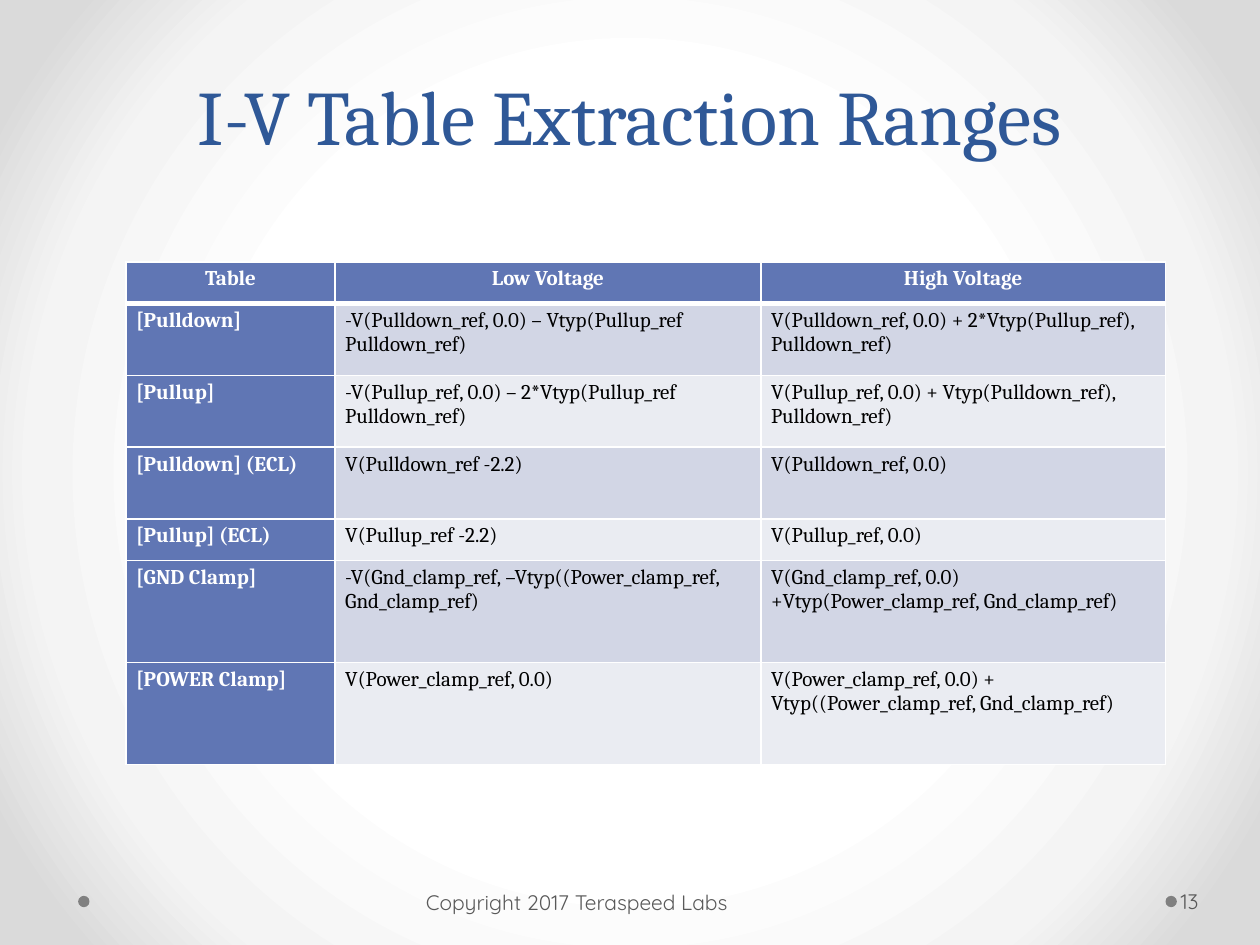
from typing import NamedTuple

import pptx
import pptx.dml.color
import pptx.enum.shapes
import pptx.enum.text
import pptx.oxml
import pptx.oxml.ns
import pptx.slide
import pptx.table
import pptx.text.text
import pptx.util

RGBColor = pptx.dml.color.RGBColor
Align = pptx.enum.text.PP_ALIGN

WIDTH = pptx.util.Inches(10)
HEIGHT = pptx.util.Inches(7.5)

WHITE = RGBColor(0xFF, 0xFF, 0xFF)
BLACK = RGBColor(0x00, 0x00, 0x00)
TITLE_BLUE = RGBColor(0x2F, 0x58, 0x97)
HEADER_BLUE = RGBColor(0x60, 0x76, 0xB4)
BAND_DARK = RGBColor(0xD2, 0xD6, 0xE5)
BAND_LIGHT = RGBColor(0xEA, 0xEC, 0xF2)
FOOTER_GRAY = RGBColor(0x59, 0x59, 0x59)
DOT_GRAY = RGBColor(0x80, 0x80, 0x80)
GLOW_MIDDLE = RGBColor(0xF4, 0xF4, 0xF4)
GLOW_EDGE = RGBColor(0xDA, 0xDA, 0xDA)


class Box(NamedTuple):
    left: float
    top: float
    width: float
    height: float


class TextStyle(NamedTuple):
    font: str
    size: float
    color: RGBColor
    bold: bool = False
    align: Align = Align.LEFT


class Label(NamedTuple):
    text: str
    box: Box
    style: TextStyle
    left_inset: float = 0.1
    right_inset: float = 0.1
    line_points: float | None = None


class TableRow(NamedTuple):
    height: float
    space_after: float
    texts: tuple[str, str, str]


FOOTER = TextStyle("Quicksand", 12, FOOTER_GRAY)
HEADING = TextStyle("Cambria", 12, WHITE, True, Align.CENTER)
ROW_NAME = TextStyle("Cambria", 12, WHITE, True)
FORMULA = TextStyle("Cambria", 12, BLACK)

DOTS = (Box(92.5, 94.8, 0.9, 1.2), Box(6.2, 94.8, 0.9, 1.2))
LABELS = (
    Label("I-V Table Extraction Ranges", Box(5, 0, 90, 23.33),
          TextStyle("Cambria", 44, TITLE_BLUE, align=Align.CENTER), line_points=58),
    Label("13", Box(93.4, 92.67, 6.1, 5.33), FOOTER, 0.03, 0.05),
    Label("Copyright 2017 Teraspeed Labs", Box(33.3, 92.8, 31.1, 5.33), FOOTER, 0.05),
)
TABLE_LEFT, TABLE_TOP = 10, 27.73
COLUMN_WIDTHS = (16.6, 33.8, 32.1)
ROWS = (
    TableRow(4.4, 4, ("Table", "Low Voltage", "High Voltage")),
    TableRow(7.6, 0, ("[Pulldown]",
                      "-V(Pulldown_ref, 0.0) – Vtyp(Pullup_ref Pulldown_ref)",
                      "V(Pulldown_ref, 0.0) + 2*Vtyp(Pullup_ref), Pulldown_ref)")),
    TableRow(7.6, 0, ("[Pullup]",
                      "-V(Pullup_ref, 0.0) – 2*Vtyp(Pullup_ref Pulldown_ref)",
                      "V(Pullup_ref, 0.0) + Vtyp(Pulldown_ref), Pulldown_ref)")),
    TableRow(7.6, 4, ("[Pulldown] (ECL)", "V(Pulldown_ref -2.2)", "V(Pulldown_ref, 0.0)")),
    TableRow(4.4, 4, ("[Pullup] (ECL)", "V(Pullup_ref -2.2)", "V(Pullup_ref, 0.0)")),
    TableRow(10.8, 4, ("[GND Clamp]",
                       "-V(Gnd_clamp_ref, –Vtyp((Power_clamp_ref, Gnd_clamp_ref)",
                       "V(Gnd_clamp_ref, 0.0) +Vtyp(Power_clamp_ref, Gnd_clamp_ref)")),
    TableRow(10.8, 0, ("[POWER Clamp]", "V(Power_clamp_ref, 0.0)",
                       "V(Power_clamp_ref, 0.0) + Vtyp((Power_clamp_ref, Gnd_clamp_ref)")),
)


def across(share: float) -> int:
    return round(WIDTH * share / 100)


def down(share: float) -> int:
    return round(HEIGHT * share / 100)


def place(box: Box) -> tuple[int, int, int, int]:
    return across(box.left), down(box.top), across(box.width), down(box.height)


def write(paragraph: pptx.text.text._Paragraph, text: str, style: TextStyle) -> None:
    paragraph.alignment = style.align
    run = paragraph.add_run()
    run.text = text
    run.font.name = style.font
    run.font.size = pptx.util.Pt(style.size)
    run.font.bold = style.bold
    run.font.color.rgb = style.color


def paint_background(slide: pptx.slide.Slide) -> None:
    slide.background.fill.solid()
    properties = slide.element.find(".//" + pptx.oxml.ns.qn("p:bgPr"))
    stops = "".join(
        f'<a:gs pos="{share * 1000}"><a:srgbClr val="{color}"/></a:gs>'
        for share, color in ((50, WHITE), (76, GLOW_MIDDLE), (92, GLOW_EDGE))
    )
    gradient = pptx.oxml.parse_xml(
        f'<a:gradFill {pptx.oxml.ns.nsdecls("a")} rotWithShape="1"><a:gsLst>{stops}</a:gsLst>'
        '<a:path path="circle"><a:fillToRect l="50000" t="50000" r="50000" b="50000"/>'
        "</a:path></a:gradFill>"
    )
    properties.replace(properties[0], gradient)


def draw_dot(slide: pptx.slide.Slide, box: Box) -> None:
    dot = slide.shapes.add_shape(pptx.enum.shapes.MSO_SHAPE.OVAL, *place(box))
    dot.shadow.inherit = False
    dot.fill.solid()
    dot.fill.fore_color.rgb = DOT_GRAY
    dot.line.fill.background()


def draw_label(slide: pptx.slide.Slide, label: Label) -> None:
    frame = slide.shapes.add_textbox(*place(label.box)).text_frame
    frame.word_wrap = True
    frame.vertical_anchor = pptx.enum.text.MSO_ANCHOR.MIDDLE
    frame.margin_left = pptx.util.Inches(label.left_inset)
    frame.margin_right = pptx.util.Inches(label.right_inset)
    paragraph = frame.paragraphs[0]
    if label.line_points:
        paragraph.line_spacing = pptx.util.Pt(label.line_points)
    write(paragraph, label.text, label.style)


def draw_borders(cell: pptx.table._Cell, top: float, bottom: float) -> None:
    properties = cell._tc.get_or_add_tcPr()
    sides = (("L", 1), ("R", 1), ("T", top), ("B", bottom))
    for index, (side, points) in enumerate(sides):
        properties.insert(index, pptx.oxml.parse_xml(
            f'<a:ln{side} {pptx.oxml.ns.nsdecls("a")} w="{pptx.util.Pt(points)}">'
            f'<a:solidFill><a:srgbClr val="{WHITE}"/></a:solidFill></a:ln{side}>'
        ))


def draw_table(slide: pptx.slide.Slide) -> None:
    box = Box(TABLE_LEFT, TABLE_TOP, sum(COLUMN_WIDTHS), sum(row.height for row in ROWS))
    table = slide.shapes.add_table(len(ROWS), len(COLUMN_WIDTHS), *place(box)).table
    for column, width in zip(table.columns, COLUMN_WIDTHS):
        column.width = across(width)
    for row_index, row in enumerate(ROWS):
        table.rows[row_index].height = down(row.height)
        band = BAND_DARK if row_index % 2 else BAND_LIGHT
        for column_index, text in enumerate(row.texts):
            is_header = row_index == 0
            is_name = column_index == 0
            cell = table.cell(row_index, column_index)
            cell.margin_left = cell.margin_right = pptx.util.Inches(0.08)
            cell.margin_top = cell.margin_bottom = pptx.util.Inches(0.04)
            cell.fill.solid()
            cell.fill.fore_color.rgb = HEADER_BLUE if is_header or is_name else band
            draw_borders(cell, 3 if row_index == 1 else 1, 3 if is_header else 1)
            paragraph = cell.text_frame.paragraphs[0]
            paragraph.space_after = pptx.util.Pt(row.space_after)
            write(paragraph, text, HEADING if is_header else ROW_NAME if is_name else FORMULA)


def main() -> None:
    presentation = pptx.Presentation()
    presentation.slide_width = WIDTH
    presentation.slide_height = HEIGHT
    slide = presentation.slides.add_slide(presentation.slide_layouts[6])
    paint_background(slide)
    for dot in DOTS:
        draw_dot(slide, dot)
    for label in LABELS:
        draw_label(slide, label)
    draw_table(slide)
    presentation.save("out.pptx")


if __name__ == "__main__":
    main()
